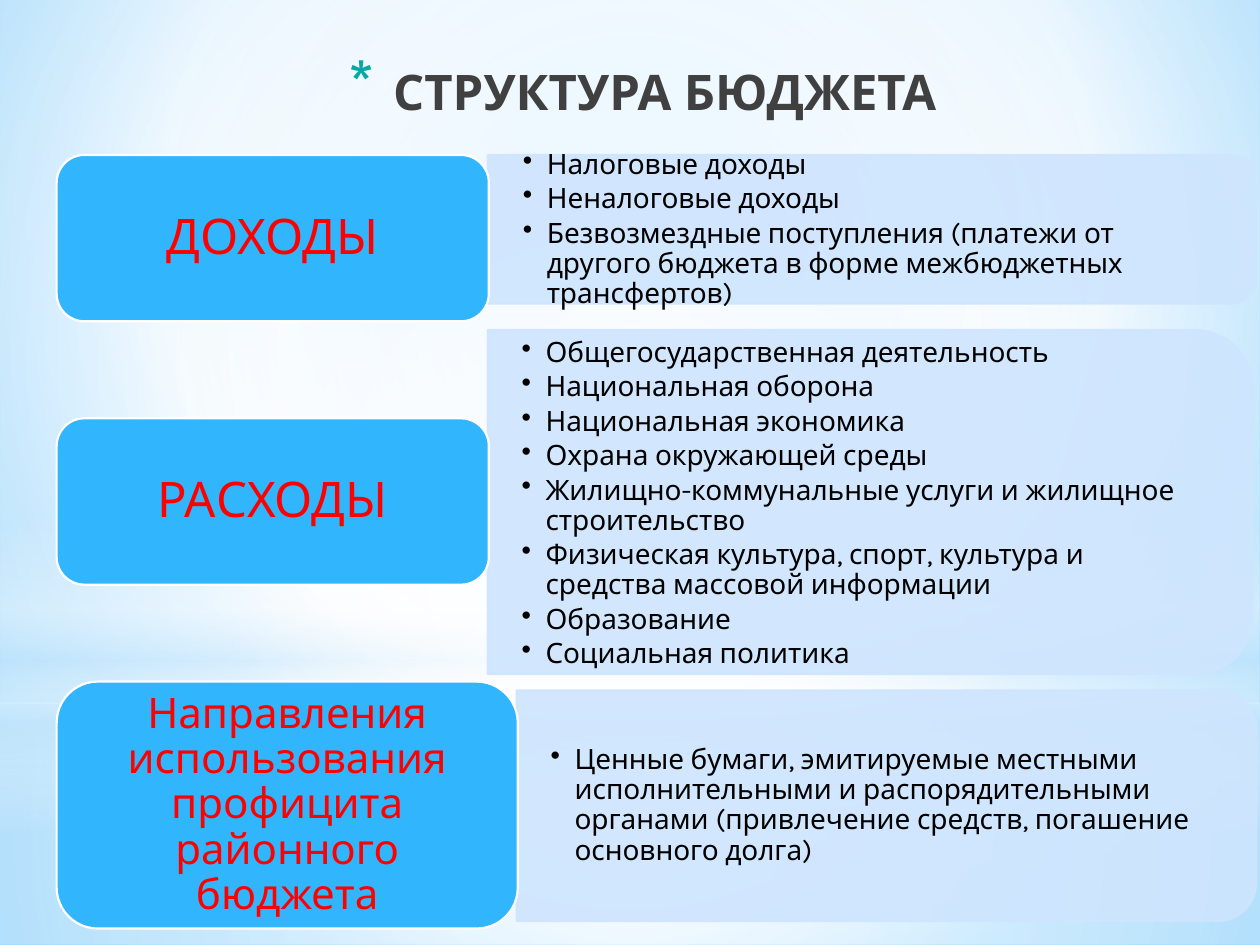
from dataclasses import dataclass

from lxml import etree
from pptx import Presentation
from pptx.dml.color import RGBColor
from pptx.enum.shapes import MSO_SHAPE
from pptx.enum.text import MSO_ANCHOR, PP_ALIGN
from pptx.oxml import parse_xml
from pptx.oxml.ns import nsdecls, qn
from pptx.util import Inches, Pt

RECTANGLE = MSO_SHAPE.RECTANGLE
ELLIPSE = MSO_SHAPE.OVAL
ROUNDED = MSO_SHAPE.ROUNDED_RECTANGLE
ROUNDED_TOP = MSO_SHAPE.ROUND_2_SAME_RECTANGLE
CENTER, LEFT = PP_ALIGN.CENTER, PP_ALIGN.LEFT
TOP, MIDDLE = MSO_ANCHOR.TOP, MSO_ANCHOR.MIDDLE

FONT = "Karla"
BLACK = RGBColor(0x00, 0x00, 0x00)
WHITE = RGBColor(0xFF, 0xFF, 0xFF)
RED = RGBColor(0xFF, 0x00, 0x00)
GRAY = RGBColor(0x40, 0x40, 0x40)
TEAL = RGBColor(0x04, 0xA8, 0xA4)
BLUE = RGBColor(0x31, 0xB6, 0xFD)
PANEL = RGBColor(0xCE, 0xE5, 0xFE)
MIST = RGBColor(0xC6, 0xE7, 0xFC)
SKY = RGBColor(0xB0, 0xE0, 0xFF)
DEEP_SKY = RGBColor(0x6B, 0xC5, 0xFF)

LABEL_LEFT = 0.45
PANEL_INSETS = (0.27, 0.14)
LABEL_INSETS = (0.18, 0.12)


@dataclass
class Stop:
    position: int
    color: RGBColor
    alpha: int = 100


@dataclass
class Area:
    left: float
    top: float
    width: float
    height: float

    def lengths(self):
        return [Inches(v) for v in (self.left, self.top, self.width, self.height)]


@dataclass
class Section:
    label: str
    label_size: int
    label_top: float
    label_width: float
    label_height: float
    panel: Area
    text_area: Area
    items: list[str]


CENTERED = (50, 50, 50, 50)
BACKDROP = [
    (RECTANGLE, Area(0, 5.58, 10, 1.92), CENTERED,
     [Stop(0, WHITE, 91), Stop(37, WHITE, 76), Stop(100, MIST, 79)]),
    (RECTANGLE, Area(0, 0, 10, 5.58), CENTERED,
     [Stop(0, WHITE, 89), Stop(48, WHITE, 62), Stop(100, MIST, 79)]),
    (RECTANGLE, Area(0, 4.12, 10, 2.5), None,
     [Stop(0, WHITE, 0), Stop(29, WHITE, 30), Stop(45, MIST, 40),
      Stop(55, WHITE, 26), Stop(65, MIST, 60), Stop(100, WHITE, 0)]),
    (ELLIPSE, Area(0, 1.75, 10, 5.58), CENTERED,
     [Stop(0, WHITE), Stop(56, WHITE, 0)]),
]

SECTIONS = [
    Section("ДОХОДЫ", 28, 1.23, 3.43, 1.32,
            Area(3.87, 1.23, 6.1, 1.18), Area(3.88, 1.29, 6.04, 1.07),
            ["Налоговые доходы",
             "Неналоговые доходы",
             "Безвозмездные поступления (платежи от другого бюджета "
             "в форме межбюджетных трансфертов)"]),
    Section("РАСХОДЫ", 28, 3.32, 3.43, 1.32,
            Area(3.87, 2.62, 6.07, 2.73), Area(3.87, 2.77, 5.94, 2.46),
            ["Общегосударственная деятельность",
             "Национальная оборона",
             "Национальная экономика",
             "Охрана окружающей среды",
             "Жилищно-коммунальные услуги и жилищное строительство",
             "Физическая культура, спорт, культура и средства массовой информации",
             "Образование",
             "Социальная политика"]),
    Section("Направления использования профицита районного бюджета",
            24, 5.41, 3.66, 1.96,
            Area(4.1, 5.48, 5.87, 1.83), Area(4.1, 5.57, 5.78, 1.65),
            ["Ценные бумаги, эмитируемые местными исполнительными "
             "и распорядительными органами (привлечение средств, "
             "погашение основного долга)"]),
]


def set_gradient(fill, root, stops: list[Stop], focus=None) -> None:
    """Fill with a circular gradient around focus, or a vertical one without it."""
    fill.gradient()
    old = root.find(".//" + qn("a:gradFill"))
    marks = "".join(
        f'<a:gs pos="{stop.position * 1000}"><a:srgbClr val="{stop.color}">'
        f'<a:alpha val="{stop.alpha * 1000}"/></a:srgbClr></a:gs>'
        for stop in stops)
    if focus:
        sides = " ".join(f'{side}="{v * 1000}"' for side, v in zip("ltrb", focus))
        shade = f'<a:path path="circle"><a:fillToRect {sides}/></a:path>'
    else:
        shade = '<a:lin ang="5400000" scaled="0"/>'
    new = parse_xml(f'<a:gradFill {nsdecls("a")} rotWithShape="1">'
                    f'<a:gsLst>{marks}</a:gsLst>{shade}</a:gradFill>')
    old.getparent().replace(old, new)


def add_backdrop(page, kind, area: Area, focus, stops: list[Stop]) -> None:
    shape = page.shapes.add_shape(kind, *area.lengths())
    shape.shadow.inherit = False
    shape.line.fill.background()
    set_gradient(shape.fill, shape._element.spPr, stops, focus)


def add_bullet(para, char: str, indent: float, color=None, percent=100) -> None:
    props = para._p.get_or_add_pPr()
    props.set("marL", str(Inches(indent)))
    props.set("indent", str(-Inches(indent)))
    if color is not None:
        holder = etree.SubElement(props, qn("a:buClr"))
        etree.SubElement(holder, qn("a:srgbClr")).set("val", str(color))
    etree.SubElement(props, qn("a:buSzPct")).set("val", str(percent * 1000))
    etree.SubElement(props, qn("a:buChar")).set("char", char)


def write_text(box, lines: list[str], *, size: int, color: RGBColor, bold=False,
               align=LEFT, anchor=MIDDLE, insets=(0.1, 0.05),
               line_spacing=0.9, space_after=0.0, bullet=None) -> None:
    frame = box.text_frame
    frame.word_wrap = True
    frame.vertical_anchor = anchor
    frame.margin_left = frame.margin_right = Inches(insets[0])
    frame.margin_top = frame.margin_bottom = Inches(insets[1])
    for index, line in enumerate(lines):
        para = frame.add_paragraph() if index else frame.paragraphs[0]
        para.alignment = align
        para.line_spacing = line_spacing
        para.space_after = Pt(space_after)
        if bullet:
            add_bullet(para, **bullet)
        span = para.add_run()
        span.text = line
        span.font.name, span.font.size = FONT, Pt(size)
        span.font.bold, span.font.color.rgb = bold, color


def add_panel(page, area: Area) -> None:
    """Draw a panel with rounded right corners: a top-rounded shape turned by 90°."""
    shift = (area.width - area.height) / 2
    upright = Area(area.left + shift, area.top - shift, area.height, area.width)
    shape = page.shapes.add_shape(ROUNDED_TOP, *upright.lengths())
    shape.rotation = 90
    shape.shadow.inherit = False
    shape.line.width = Pt(1.25)
    for fill in (shape.fill, shape.line.fill):
        fill.solid()
        fill.fore_color.rgb = PANEL
    for color in shape._element.spPr.iter(qn("a:srgbClr")):
        etree.SubElement(color, qn("a:alpha")).set("val", "90000")


def add_section(page, section: Section) -> None:
    add_panel(page, section.panel)
    box = page.shapes.add_textbox(*section.text_area.lengths())
    write_text(box, section.items, size=16, color=BLACK, insets=PANEL_INSETS,
               space_after=2.4, bullet={"char": "•", "indent": 0.19})
    area = Area(LABEL_LEFT, section.label_top, section.label_width, section.label_height)
    label = page.shapes.add_shape(ROUNDED, *area.lengths())
    label.shadow.inherit = False
    label.fill.solid()
    label.fill.fore_color.rgb = BLUE
    label.line.color.rgb = WHITE
    label.line.width = Pt(1.25)
    write_text(label, [section.label], size=section.label_size, color=RED,
               align=CENTER, insets=LABEL_INSETS)


def main() -> None:
    deck = Presentation()
    deck.slide_width, deck.slide_height = Inches(10), Inches(7.5)
    page = deck.slides.add_slide(deck.slide_layouts[6])
    set_gradient(page.background.fill, page._element,
                 [Stop(0, SKY), Stop(60, WHITE), Stop(100, DEEP_SKY)], (20, 10, 20, 60))
    for kind, area, focus, stops in BACKDROP:
        add_backdrop(page, kind, area, focus, stops)
    title = page.shapes.add_textbox(*Area(1.54, 0.44, 7.12, 0.87).lengths())
    write_text(title, ["СТРУКТУРА БЮДЖЕТА"], size=28, color=GRAY, bold=True,
               align=CENTER, anchor=TOP, line_spacing=1.0,
               bullet={"char": "*", "indent": 0.35, "color": TEAL, "percent": 128})
    for section in SECTIONS:
        add_section(page, section)
    deck.save("out.pptx")


if __name__ == "__main__":
    main()
